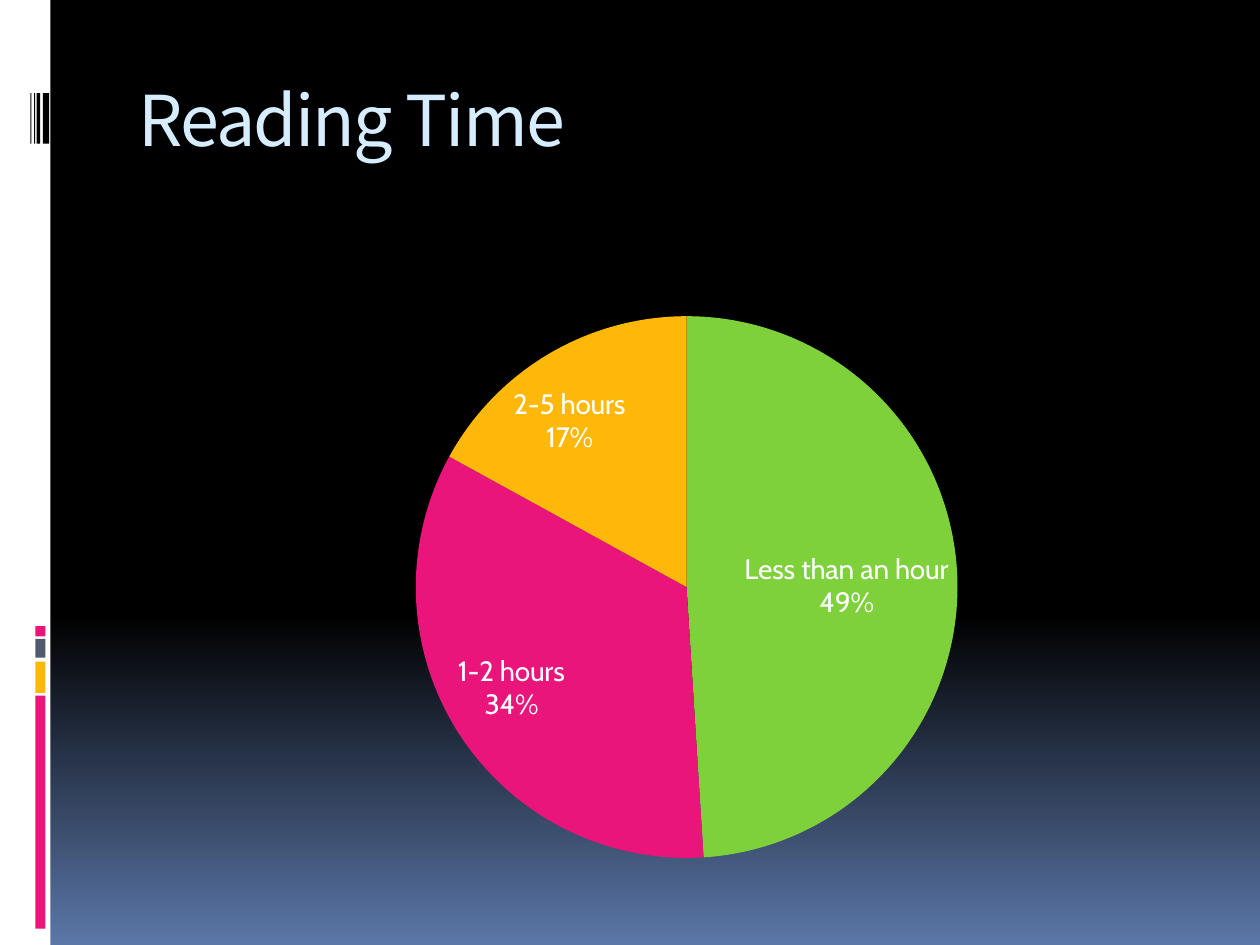
from copy import deepcopy

from pptx import Presentation
from pptx.chart.data import CategoryChartData
from pptx.dml.color import RGBColor
from pptx.enum.chart import XL_CHART_TYPE, XL_LABEL_POSITION
from pptx.enum.shapes import MSO_SHAPE
from pptx.enum.text import MSO_ANCHOR
from pptx.oxml import parse_xml
from pptx.oxml.ns import nsdecls
from pptx.util import Inches, Pt


def color(code):
    return RGBColor.from_string(code)


def layout(**parts):
    tags = "".join(f'<c:{key} val="{val}"/>' for key, val in parts.items())
    return parse_xml(
        f"<c:layout {nsdecls('c')}><c:manualLayout>{tags}</c:manualLayout></c:layout>"
    )


deck = Presentation()
deck.slide_width = Inches(10)
deck.slide_height = Inches(7.5)
slide = deck.slides.add_slide(deck.slide_layouts[6])

back = slide.background.fill
back.gradient()
back.gradient_angle = 270
for stop, place, code in zip(back.gradient_stops, (0.65, 1), ("000000", "5B77A8")):
    stop.position = place
    stop.color.rgb = color(code)

bars = [
    (0, 0, 0.4, 7.5, "FFFFFF"),
    (0.28, 5.52, 0.08, 1.85, "EA157A"),
    (0.28, 5.25, 0.08, 0.25, "FEB80A"),
    (0.28, 5.07, 0.08, 0.15, "4E5B6F"),
    (0.28, 4.97, 0.08, 0.08, "EA157A"),
    (0.34, 0.74, 0.05, 0.4, "000000"),
    (0.29, 0.74, 0.03, 0.4, "000000"),
    (0.27, 0.74, 0.01, 0.4, "000000"),
    (0.24, 0.74, 0.01, 0.4, "000000"),
]
for *rect, code in bars:
    bar = slide.shapes.add_shape(MSO_SHAPE.RECTANGLE, *map(Inches, rect))
    bar.shadow.inherit = False
    bar.fill.solid()
    bar.fill.fore_color.rgb = color(code)
    bar.line.fill.background()

title = slide.shapes.add_textbox(Inches(1), Inches(0.56), Inches(8.5), Inches(1))
frame = title.text_frame
frame.word_wrap = True
frame.vertical_anchor = MSO_ANCHOR.TOP
run = frame.paragraphs[0].add_run()
run.text = "Reading Time"
run.font.name = "Noto Sans CJK KR"
run.font.size = Pt(40)
run.font.color.rgb = color("D6ECFF")
run.font._element.set("spc", "-100")

wide, high = 8.5, 5
data = CategoryChartData(number_format="0")
data.categories = ["Less than an hour", "1-2 hours", "2-5 hours"]
data.add_series("Series 1", (49, 34, 17))
chart = slide.shapes.add_chart(
    XL_CHART_TYPE.PIE, Inches(1), Inches(1.95), Inches(wide), Inches(high), data
).chart
chart.has_title = False
chart.has_legend = False
chart.font.name = "Cabin"
chart.font.size = Pt(10)
chart.font.color.rgb = color("FFFFFF")

plot = chart.plots[0]
plot.vary_by_categories = True
pie = plot.series[0]
for spot, code in enumerate(("7FD13B", "EA157A", "FEB80A")):
    fill = pie.points[spot].format.fill
    fill.solid()
    fill.fore_color.rgb = color(code)

labels = pie.data_labels
labels.show_value = False
labels.show_category_name = True
labels.show_percentage = True
labels.number_format = "0%"
labels.number_format_is_linked = False
labels.position = XL_LABEL_POSITION.INSIDE_END
labels.font.name = "Cabin"
labels.font.size = Pt(16)
labels.font.color.rgb = color("FFFFFF")
root = labels._element
for lead in root.findall("{*}showLeaderLines"):
    lead.set("val", "0")
mark = parse_xml(f"<c:separator {nsdecls('c')}>\n</c:separator>")
root.find("{*}showBubbleSize").addnext(mark)

style = [part for part in root if not part.tag.endswith("showLeaderLines")]
shifts = [(-0.01, 0.06), (-0.05, -0.06), (-0.31, 0.22)]
for spot, (right, down) in enumerate(shifts):
    label = parse_xml(f'<c:dLbl {nsdecls("c")}><c:idx val="{spot}"/></c:dLbl>')
    label.append(layout(x=right / wide, y=down / high))
    label.extend(deepcopy(style))
    root.insert(spot, label)

area = chart._chartSpace.chart.plotArea
for old in area.findall("{*}layout"):
    area.remove(old)
area.insert(0, layout(
    layoutTarget="inner", xMode="edge", yMode="edge",
    x=2.3 / wide, y=0.56 / high, w=4.3 / wide, h=4.3 / high,
))

deck.save("out.pptx")
